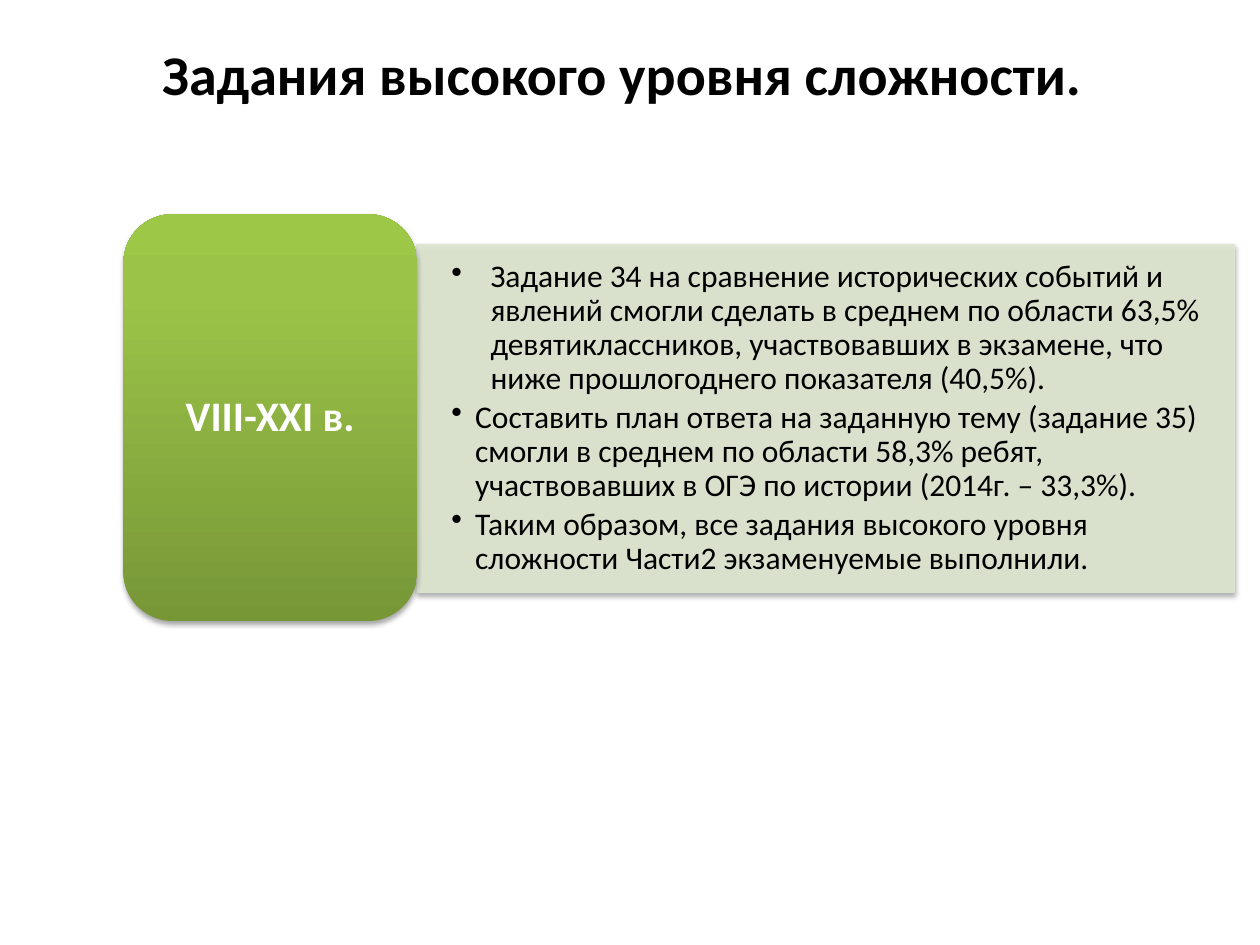
from copy import deepcopy

from lxml.etree import SubElement
from pptx import Presentation
from pptx.dml.color import RGBColor
from pptx.enum.shapes import MSO_SHAPE
from pptx.enum.text import MSO_ANCHOR, PP_ALIGN
from pptx.oxml.ns import qn
from pptx.util import Cm, Pt

BLACK = RGBColor(0x00, 0x00, 0x00)
WHITE = RGBColor(0xFF, 0xFF, 0xFF)
PALE_GREEN = RGBColor(0xDE, 0xE7, 0xD1)
TILE_STOPS = (
    (0, RGBColor(0x77, 0x97, 0x37)),
    (0.8, RGBColor(0x9B, 0xC3, 0x48)),
    (1, RGBColor(0x9D, 0xC7, 0x46)),
)
FINDINGS = (
    ("Задание 34 на сравнение исторических событий и явлений смогли сделать "
     "в среднем по области 63,5% девятиклассников, участвовавших в экзамене, "
     "что ниже прошлогоднего показателя (40,5%).", 0.79),
    ("Составить план ответа на заданную тему (задание 35) смогли в среднем "
     "по области 58,3% ребят, участвовавших в ОГЭ по истории "
     "(2014г. – 33,3%).", 0.48),
    ("Таким образом, все задания высокого уровня сложности Части2 "
     "экзаменуемые выполнили.", 0.48),
)


class SlideBuilder:
    """Holds the style and the current page, and adds each kind of element."""

    def __init__(self, page, font="Calibri"):
        self.page = page
        self.font = font

    def set_font(self, para, size, color, bold=False):
        para.font.name = self.font
        para.font.size = Pt(size)
        para.font.bold = bold
        para.font.color.rgb = color

    def set_frame(self, box, side, top):
        frame = box.text_frame
        frame.word_wrap = True
        frame.vertical_anchor = MSO_ANCHOR.MIDDLE
        frame.margin_left = frame.margin_right = Cm(side)
        frame.margin_top = frame.margin_bottom = Cm(top)
        return frame

    def add_opacity(self, color_element, percent):
        SubElement(color_element, qn("a:alpha"), val=str(percent * 1000))

    def add_block(self, kind, left, top, width, height):
        box = self.page.shapes.add_shape(
            kind, Cm(left), Cm(top), Cm(width), Cm(height))
        box.shadow.inherit = False
        effects = box._element.spPr.find(qn("a:effectLst"))
        shadow = SubElement(effects, qn("a:outerShdw"), blurRad=str(Pt(3.1)),
                            dist=str(Pt(1.8)), dir="5400000", rotWithShape="0")
        self.add_opacity(SubElement(shadow, qn("a:srgbClr"), val=str(BLACK)), 35)
        return box

    def add_title(self, text, left, top, width, height):
        box = self.page.shapes.add_textbox(
            Cm(left), Cm(top), Cm(width), Cm(height))
        para = self.set_frame(box, 0.25, 0.13).paragraphs[0]
        para.text = text
        self.set_font(para, 32, BLACK, bold=True)

    def add_panel(self, findings, left, top, width, height):
        box = self.add_block(MSO_SHAPE.RECTANGLE, left, top, width, height)
        box.fill.solid()
        box.fill.fore_color.rgb = PALE_GREEN
        box.line.color.rgb = PALE_GREEN
        box.line.width = Pt(0.75)
        for color_element in box._element.spPr.findall(
                ".//" + qn("a:solidFill") + "/" + qn("a:srgbClr")):
            self.add_opacity(color_element, 90)
        frame = self.set_frame(box, 0.69, 0.36)
        for index, (text, indent) in enumerate(findings):
            para = frame.add_paragraph() if index else frame.paragraphs[0]
            para.text = text
            para.alignment = PP_ALIGN.LEFT
            para.line_spacing = 0.9
            para.space_after = Pt(2.7)
            properties = para._p.get_or_add_pPr()
            properties.set("marL", str(Cm(indent)))
            properties.set("indent", str(-Cm(indent)))
            SubElement(properties, qn("a:buChar"), char="•")
            self.set_font(para, 18, BLACK)

    def add_tile(self, text, left, top, width, height):
        box = self.add_block(
            MSO_SHAPE.ROUNDED_RECTANGLE, left, top, width, height)
        box.fill.gradient()
        box.fill.gradient_angle = 90
        stop_list = box._element.spPr.find(".//" + qn("a:gsLst"))
        stop_list.append(deepcopy(stop_list[-1]))
        for stop, (position, color) in zip(box.fill.gradient_stops, TILE_STOPS):
            stop.position = position
            stop.color.rgb = color
        box.line.fill.background()
        para = self.set_frame(box, 0.3, 0.3).paragraphs[0]
        para.text = text
        para.alignment = PP_ALIGN.CENTER
        para.line_spacing = 0.9
        self.set_font(para, 24, WHITE, bold=True)


def main():
    deck = Presentation()
    deck.slide_width, deck.slide_height = Cm(25.4), Cm(19.05)
    builder = SlideBuilder(deck.slides.add_slide(deck.slide_layouts[6]))
    builder.add_panel(FINDINGS, 8.41, 4.93, 16.48, 7.01)
    builder.add_tile("VIII-XXI в.", 2.49, 4.32, 5.92, 8.2)
    builder.add_title("Задания высокого уровня сложности.",
                      3.02, 0.33, 22.43, 2.29)
    deck.save("out.pptx")


if __name__ == "__main__":
    main()
